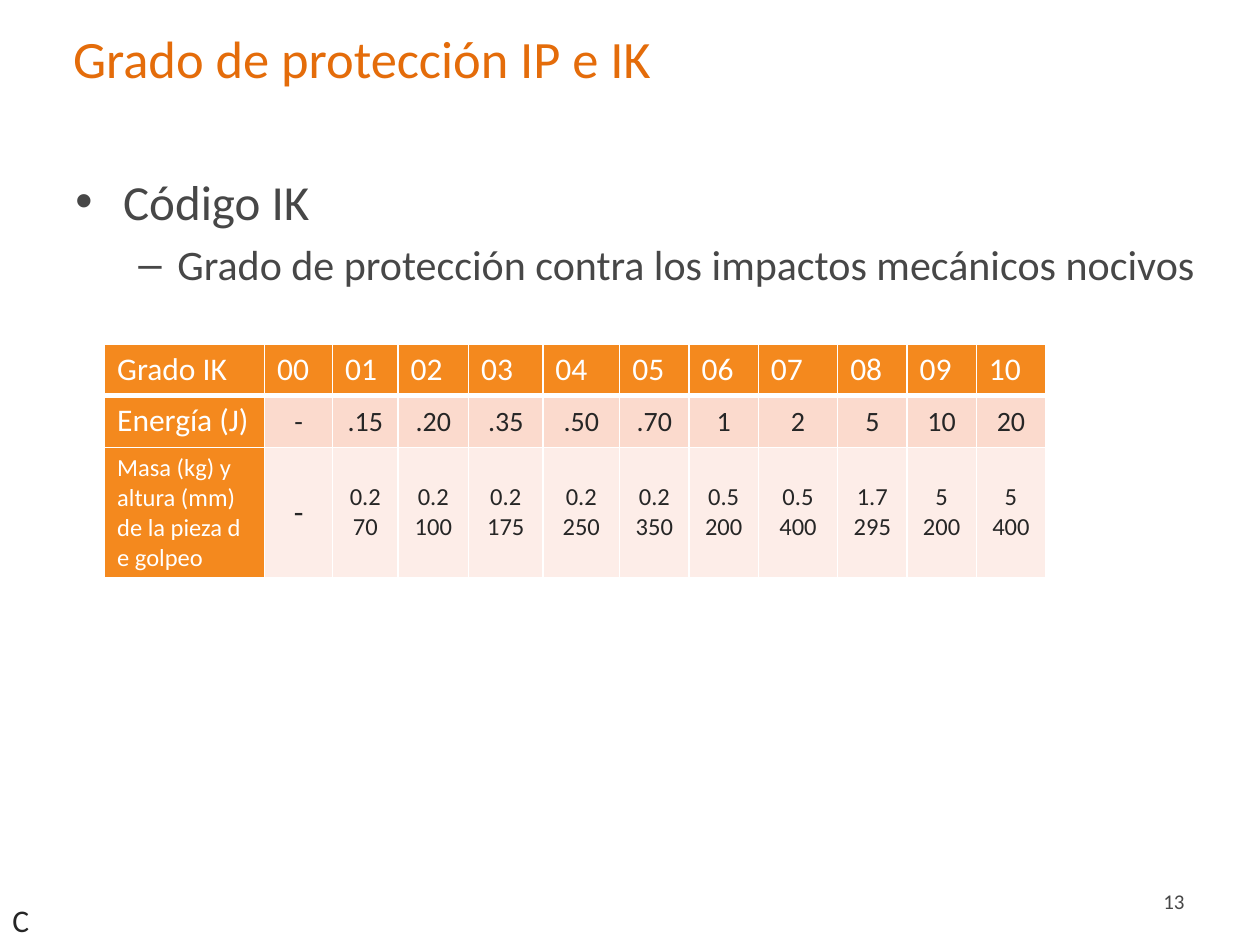
from lxml.etree import SubElement
from pptx import Presentation
from pptx.dml.color import RGBColor
from pptx.enum.text import MSO_ANCHOR, MSO_AUTO_SIZE, PP_ALIGN
from pptx.oxml.ns import qn
from pptx.util import Inches, Pt

FONT = "Calibri"
TITLE_ORANGE = RGBColor(0xE4, 0x6C, 0x0A)
HEADER_ORANGE = RGBColor(0xF4, 0x89, 0x1E)
ENERGY_PINK = RGBColor(0xFB, 0xDA, 0xCD)
IMPACT_PINK = RGBColor(0xFD, 0xED, 0xE8)
GREY = RGBColor(0x47, 0x47, 0x47)
DARK = RGBColor(0x26, 0x26, 0x26)
WHITE = RGBColor(0xFF, 0xFF, 0xFF)

# Text, level, size, left margin, hanging indent, bullet
OUTLINE = [
    ("Código IK", 0, 28, 0.38, 0.38, "•"),
    ("Grado de protección contra los impactos mecánicos nocivos", 1, 24, 0.81, 0.31, "–"),
]

COLUMN_WIDTHS = [1.27, 0.54, 0.52, 0.56, 0.59, 0.61, 0.55, 0.55, 0.63, 0.55, 0.55, 0.55]
ROW_HEIGHTS = [0.41, 0.41, 1.02]
GRADES = ["Grado IK"] + [f"{grade:02d}" for grade in range(11)]
ENERGIES = ["Energía (J)", "-", ".15", ".20", ".35", ".50", ".70", "1", "2", "5", "10", "20"]
# Mass above drop height, one paragraph each
IMPACTS = ["Masa (kg) y altura (mm) de la pieza d e golpeo", "-",
           "0.2\n70", "0.2\n100", "0.2\n175", "0.2\n250", "0.2\n350",
           "0.5\n200", "0.5\n400", "1.7\n295", "5\n200", "5\n400"]
# Texts, label size, value size, value fill
TABLE_ROWS = [
    (GRADES, 18, 18, HEADER_ORANGE),
    (ENERGIES, 18, 16, ENERGY_PINK),
    (IMPACTS, 14, 14, IMPACT_PINK),
]


def style(para, size, color, align=PP_ALIGN.LEFT):
    para.alignment = align
    para.font.name = FONT
    para.font.size = Pt(size)
    para.font.color.rgb = color


def add_text_box(page, box, text, size, color, align=PP_ALIGN.LEFT,
                 anchor=MSO_ANCHOR.TOP, wrap=True):
    frame = page.shapes.add_textbox(*map(Inches, box)).text_frame
    frame.word_wrap = wrap
    frame.vertical_anchor = anchor
    frame.text = text
    style(frame.paragraphs[0], size, color, align)
    return frame


def place_title(page, box, text):
    title = page.shapes.title
    title.left, title.top, title.width, title.height = map(Inches, box)
    frame = title.text_frame
    frame.text = text
    frame.vertical_anchor = MSO_ANCHOR.MIDDLE
    style(frame.paragraphs[0], 30, TITLE_ORANGE)


def add_outline(page, box, items):
    frame = page.shapes.add_textbox(*map(Inches, box)).text_frame
    frame.word_wrap = True
    for index, (text, level, size, margin, hanging, bullet) in enumerate(items):
        para = frame.add_paragraph() if index else frame.paragraphs[0]
        para.text = text
        para.level = level
        if index:
            para.space_before = Pt(0.2 * size)
        properties = para._p.get_or_add_pPr()
        properties.set("marL", str(Inches(margin)))
        properties.set("indent", str(-Inches(hanging)))
        SubElement(properties, qn("a:buFont"), typeface="Arial")
        SubElement(properties, qn("a:buChar"), char=bullet)
        style(para, size, GREY)


def set_borders(cell, bottom_width):
    properties = cell._tc.get_or_add_tcPr()
    sides = [("L", 1), ("R", 1), ("T", 1), ("B", bottom_width)]
    for side, width in sides:
        line = SubElement(properties, qn(f"a:ln{side}"), w=str(Pt(width)))
        fill = SubElement(line, qn("a:solidFill"))
        SubElement(fill, qn("a:srgbClr"), val=str(WHITE))


def fill_cell(cell, text, size, color, fill, is_label, is_header):
    # Borders go before the fill in the cell properties
    set_borders(cell, 3 if is_header else 1)
    cell.fill.solid()
    cell.fill.fore_color.rgb = fill
    cell.text = text
    cell.vertical_anchor = MSO_ANCHOR.TOP if is_label else MSO_ANCHOR.MIDDLE
    for para in cell.text_frame.paragraphs:
        style(para, size, color, PP_ALIGN.LEFT if is_label else PP_ALIGN.CENTER)


def add_grade_table(page, left, top):
    table = page.shapes.add_table(
        len(ROW_HEIGHTS), len(COLUMN_WIDTHS), Inches(left), Inches(top),
        Inches(sum(COLUMN_WIDTHS)), Inches(sum(ROW_HEIGHTS))).table
    table.first_col = True
    for column, width in zip(table.columns, COLUMN_WIDTHS):
        column.width = Inches(width)
    for row, height in zip(table.rows, ROW_HEIGHTS):
        row.height = Inches(height)
    for r, (texts, label_size, value_size, value_fill) in enumerate(TABLE_ROWS):
        for c, text in enumerate(texts):
            is_label = r == 0 or c == 0
            size = label_size if is_label else value_size
            if r == 2 and text == "-":
                size = 18
            fill_cell(table.cell(r, c), text, size,
                      WHITE if is_label else DARK,
                      HEADER_ORANGE if is_label else value_fill,
                      is_label, r == 0)


def main():
    deck = Presentation()
    deck.slide_width, deck.slide_height = Inches(10), Inches(7.5)
    page = deck.slides.add_slide(deck.slide_layouts[5])

    # Heading and outline
    place_title(page, (0.48, 0.08, 9.19, 0.75), "Grado de protección IP e IK")
    add_outline(page, (0.5, 1.31, 9.17, 5.39), OUTLINE)

    # Page number
    add_text_box(page, (7.17, 6.95, 2.33, 0.4), "13", 12, GREY,
                 PP_ALIGN.RIGHT, MSO_ANCHOR.MIDDLE)

    # IK grades
    add_grade_table(page, 0.83, 2.73)

    # Corner letter
    corner = add_text_box(page, (0, 7.1, 0.34, 0.4), "C", 18, DARK, wrap=False)
    corner.auto_size = MSO_AUTO_SIZE.SHAPE_TO_FIT_TEXT

    deck.save("out.pptx")


if __name__ == "__main__":
    main()
